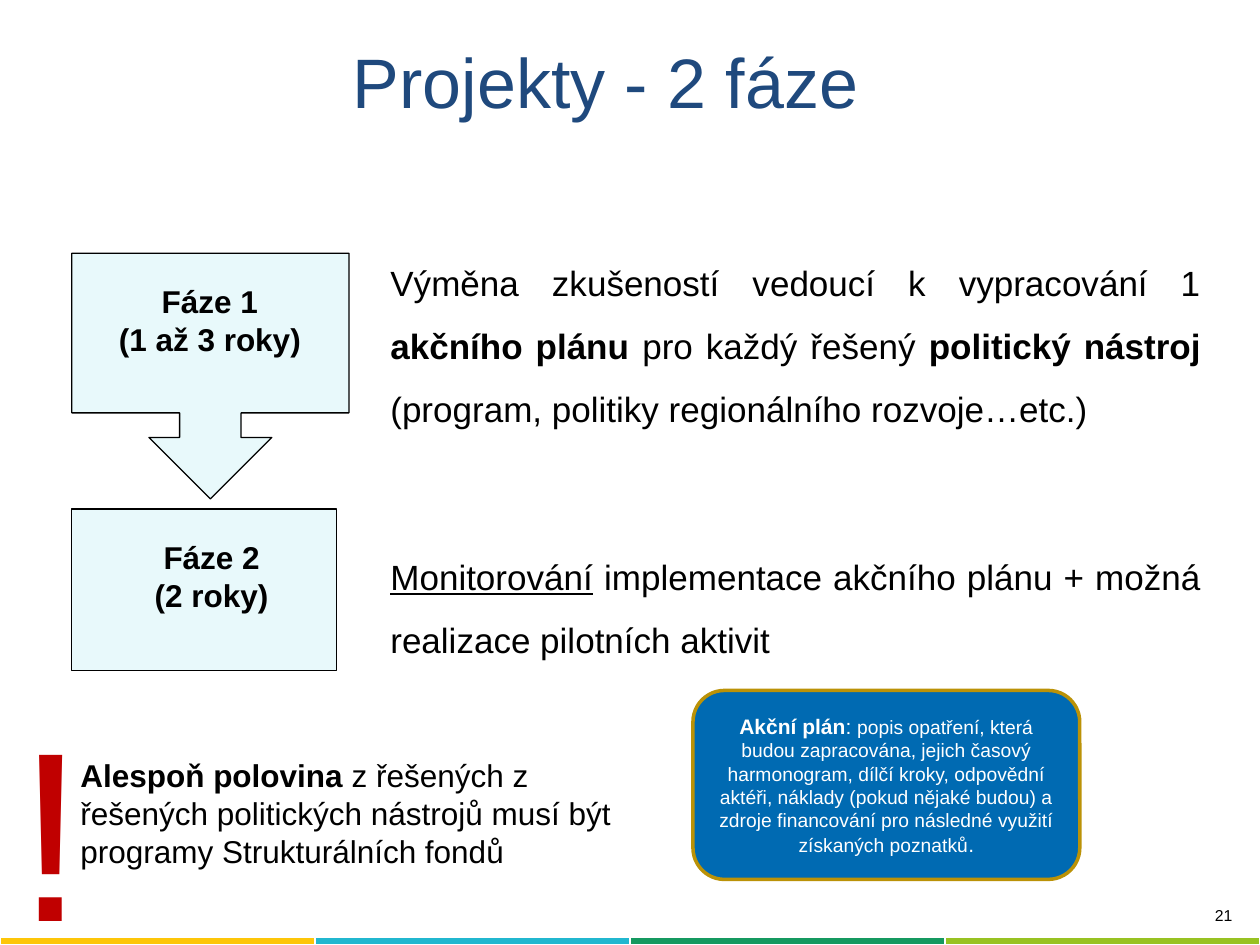
from lxml.etree import SubElement
from pptx import Presentation
from pptx.dml.color import RGBColor
from pptx.enum.shapes import MSO_SHAPE
from pptx.enum.text import MSO_ANCHOR, PP_ALIGN
from pptx.oxml.ns import qn
from pptx.util import Inches, Pt

COLORS = {
    "black": "000000",
    "white": "FFFFFF",
    "title": "1F497D",
    "phase": "E8F9FB",
    "note": "006AB2",
    "note_border": "BB9207",
    "warning": "C00000",
}
STRIPE = ["FDC609", "21B7CF", "159960", "98C222"]
WIDTH, HEIGHT = 10, 7.5
STRIPE_HEIGHT = 0.06
PHASE_LEFT = 0.57


def color(name):
    return RGBColor.from_string(COLORS[name])


def write(frame, paragraphs, size, tint="black", align=PP_ALIGN.LEFT,
          bold=None, line_spacing=None, gap=0):
    """Fill a frame; each paragraph is a list of (text, run font settings)."""
    for index, runs in enumerate(paragraphs):
        paragraph = frame.add_paragraph() if index else frame.paragraphs[0]
        paragraph.alignment = align
        if line_spacing:
            paragraph.line_spacing = line_spacing
        if index and gap:
            paragraph.space_before = Pt(gap)
        paragraph.font.name = "Arial"
        paragraph.font.size = Pt(size)
        paragraph.font.bold = bold
        paragraph.font.color.rgb = color(tint)
        for text, settings in runs:
            run = paragraph.add_run()
            run.text = text
            for key, value in settings.items():
                setattr(run.font, key, value)


def add_text(slide, box, paragraphs, size, wrap=True, **style):
    textbox = slide.shapes.add_textbox(*map(Inches, box))
    textbox.text_frame.word_wrap = wrap
    write(textbox.text_frame, paragraphs, size, **style)


def add_panel(slide, preset, box, fill, border, border_width):
    shape = slide.shapes.add_shape(preset, *map(Inches, box))
    shape.shadow.inherit = False
    shape.fill.solid()
    shape.fill.fore_color.rgb = color(fill)
    shape.line.color.rgb = color(border)
    shape.line.width = Pt(border_width)
    return shape


def add_phase(slide, preset, box, label_box, name, duration):
    add_panel(slide, preset, box, "phase", "black", 0.75)
    add_text(slide, label_box, [[(name, {})], [(duration, {})]], 18,
             align=PP_ALIGN.CENTER, bold=True)


def add_stripe(slide):
    frame = slide.shapes.add_table(
        1, len(STRIPE), 0, Inches(HEIGHT - STRIPE_HEIGHT),
        Inches(WIDTH), Inches(STRIPE_HEIGHT))
    for cell, fill in zip(frame.table.iter_cells(), STRIPE):
        cell.fill.solid()
        cell.fill.fore_color.rgb = RGBColor.from_string(fill)
        cell.margin_left = cell.margin_right = 0
        cell.margin_top = cell.margin_bottom = 0
        paragraph = cell.text_frame.paragraphs[0]
        SubElement(paragraph._p, qn("a:endParaRPr"), sz="100")


def add_note(slide):
    note = add_panel(slide, MSO_SHAPE.ROUNDED_RECTANGLE, (5.5, 5.48, 3.07, 1.5),
                     "note", "note_border", 2)
    note.text_frame.word_wrap = True
    note.text_frame.vertical_anchor = MSO_ANCHOR.MIDDLE
    write(note.text_frame, [[
        ("Akční plán", {"bold": True}),
        (": ", {}),
        ("popis opatření, která budou zapracována, jejich časový harmonogram, "
         "dílčí kroky, odpovědní aktéři, náklady (pokud nějaké budou) a zdroje "
         "financování pro následné využití získaných poznatků", {"size": Pt(11)}),
        (".", {}),
    ]], 12, tint="white", align=PP_ALIGN.CENTER)


def main():
    presentation = Presentation()
    presentation.slide_width = Inches(WIDTH)
    presentation.slide_height = Inches(HEIGHT)
    slide = presentation.slides.add_slide(presentation.slide_layouts[6])

    add_stripe(slide)
    add_text(slide, (7.91, 7.14, 1.97, 0.3), [[("21", {})]], 9,
             align=PP_ALIGN.RIGHT)
    add_text(slide, (0.16, 0.26, 9.29, 0.77), [[("Projekty - 2 fáze", {})]], 40,
             tint="title", align=PP_ALIGN.CENTER)
    add_text(slide, (3, 1.86, 6.63, 3.47), [
        [("Výměna zkušeností vedoucí k vypracování 1 ", {}),
         ("akčního plánu ", {"bold": True}),
         ("pro každý řešený ", {}),
         ("politický nástroj ", {"bold": True}),
         ("(program, politiky regionálního rozvoje…etc.)", {})],
        [("Monitorování", {"underline": True}),
         (" implementace akčního plánu + možná realizace pilotních aktivit", {})],
    ], 20, align=PP_ALIGN.JUSTIFY, line_spacing=1.5, gap=60)

    add_phase(slide, MSO_SHAPE.DOWN_ARROW_CALLOUT, (PHASE_LEFT, 2.01, 2.2, 1.95),
              (0.59, 2.19, 2.15, 0.71), "Fáze 1", "(1 až 3 roky)")
    add_phase(slide, MSO_SHAPE.RECTANGLE, (PHASE_LEFT, 4.04, 2.1, 1.28),
              (0.63, 4.22, 2.1, 0.71), "Fáze 2", "(2 roky)")

    add_note(slide)
    add_text(slide, (0.54, 5.95, 4.8, 1.01), [[
        ("Alespoň polovina ", {"bold": True}),
        ("z řešených z řešených politických nástrojů musí být programy "
         "Strukturálních fondů", {}),
    ]], 18)
    add_text(slide, (0.04, 5.35, 0.74, 2.42), [[("!", {})]], 138,
             wrap=False, tint="warning")
    presentation.save("out.pptx")


if __name__ == "__main__":
    main()
